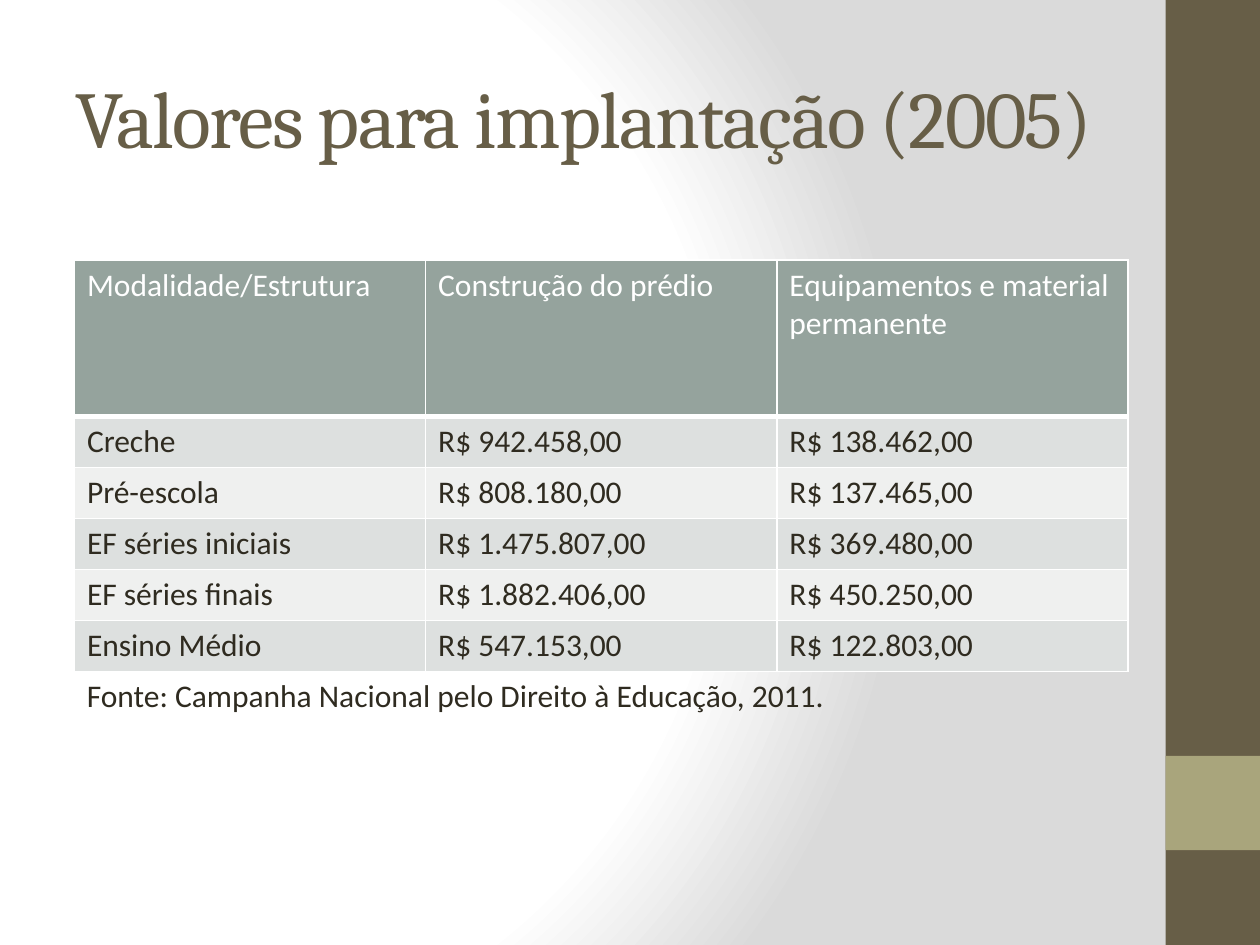
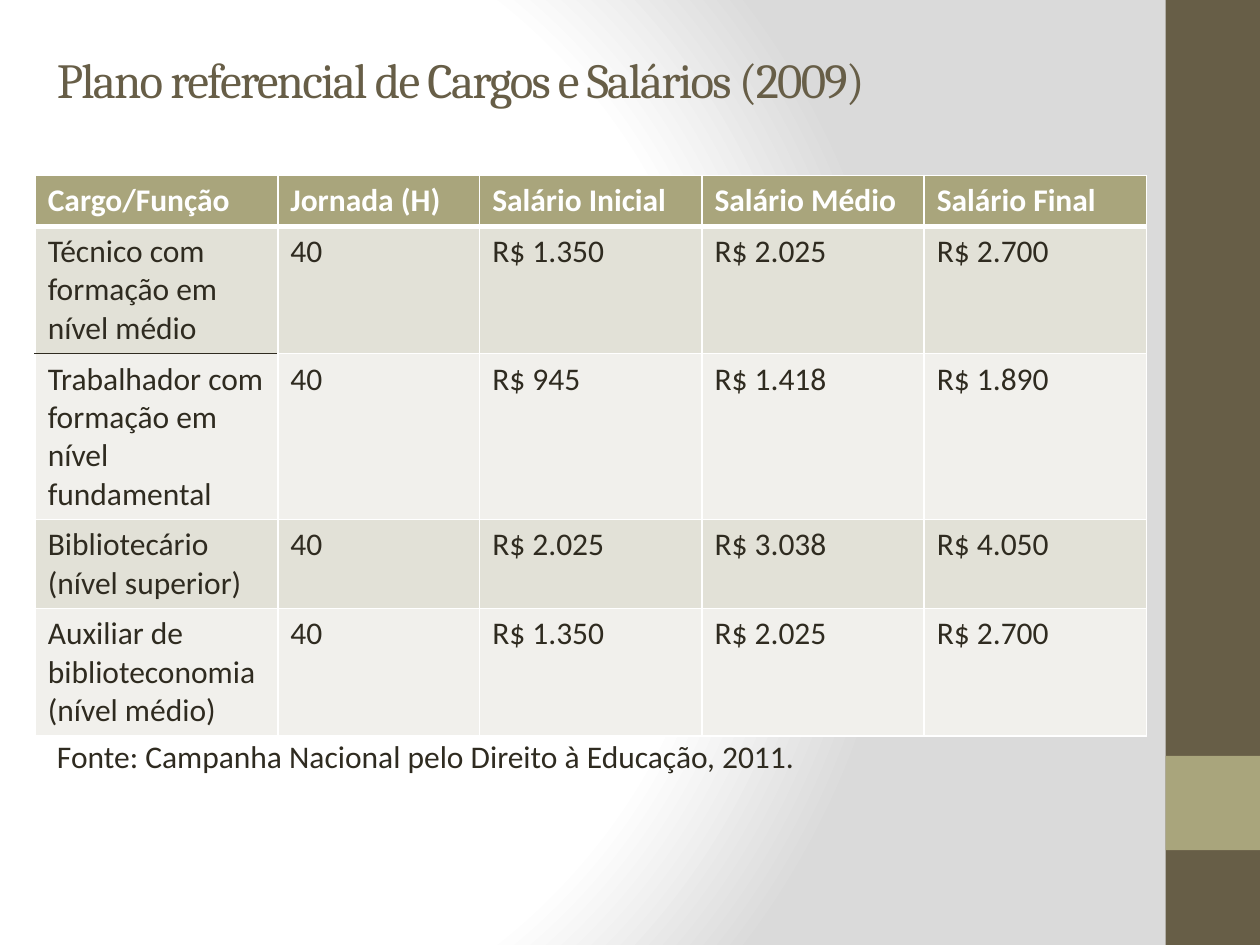
"""Build two table slides on school set-up costs and reference salaries."""
from dataclasses import dataclass

from lxml import etree
from pptx import Presentation
from pptx import util as u
from pptx.dml import color
from pptx.enum import shapes, text
from pptx.oxml import ns, parse_xml


@dataclass(frozen=True)
class Theme:
    brown: str = "675E47"
    olive: str = "A9A57C"
    sage: str = "95A39D"
    ink: str = "2F2B20"
    white: str = "FFFFFF"
    grey: str = "DADADA"
    heading_font: str = "Cambria"
    body_font: str = "Calibri"
    body_size: int = 18
    rule: int = 1
    header_rule: int = 3


@dataclass(frozen=True)
class Area:
    left: float
    top: float
    width: float
    height: float

    def lengths(self) -> tuple:
        """Return the four sides as slide lengths."""
        return tuple(u.Cm(side) for side in (self.left, self.top, self.width, self.height))


@dataclass(frozen=True)
class TextStyle:
    font: str
    size: int
    colour: str
    bold: bool = False


@dataclass(frozen=True)
class TableStyle:
    header_fill: str
    bands: tuple[str, str]
    bold_header: bool


@dataclass(frozen=True)
class TablePage:
    title: str
    title_area: Area
    title_size: int
    table_left: float
    table_top: float
    widths: tuple[float, ...]
    heights: tuple[float, ...]
    rows: tuple[tuple[str, ...], ...]
    style: TableStyle
    source_area: Area
    dark_rules: frozenset = frozenset()


THEME = Theme()
BODY = TextStyle(THEME.body_font, THEME.body_size, THEME.ink)
SOURCE = "Fonte: Campanha Nacional pelo Direito à Educação, 2011."
SIDE_BANDS = (
    (Area(23.5, 0, 1.9, 19.05), THEME.brown),
    (Area(23.5, 15.24, 1.9, 1.9), THEME.olive),
)

PAGES = (
    TablePage(
        title="Valores para implantação (2005)",
        title_area=Area(1.27, 0.76, 21.16, 3.18),
        title_size=46,
        table_left=1.5,
        table_top=5.24,
        widths=(7.08,) * 3,
        heights=(3.15,) + (1.03,) * 5,
        rows=(
            ("Modalidade/Estrutura", "Construção do prédio", "Equipamentos e material permanente"),
            ("Creche", "R$ 942.458,00", "R$ 138.462,00"),
            ("Pré-escola", "R$ 808.180,00", "R$ 137.465,00"),
            ("EF séries iniciais", "R$ 1.475.807,00", "R$ 369.480,00"),
            ("EF séries finais", "R$ 1.882.406,00", "R$ 450.250,00"),
            ("Ensino Médio", "R$ 547.153,00", "R$ 122.803,00"),
        ),
        style=TableStyle(THEME.sage, ("DDE0DF", "EFF0EF"), False),
        source_area=Area(1.5, 13.51, 19.6, 1.03),
    ),
    TablePage(
        title="Plano referencial de Cargos e Salários (2009)",
        title_area=Area(0.9, 0, 22.86, 3.18),
        title_size=28,
        table_left=0.71,
        table_top=3.54,
        widths=(4.89, 4.07) + (4.48,) * 3,
        heights=(1.02, 2.57, 3.34, 1.8, 2.57),
        rows=(
            ("Cargo/Função", "Jornada (H)", "Salário Inicial", "Salário Médio", "Salário Final"),
            ("Técnico com formação em nível médio", "40", "R$ 1.350", "R$ 2.025", "R$ 2.700"),
            ("Trabalhador com formação em nível fundamental", "40", "R$ 945", "R$ 1.418", "R$ 1.890"),
            ("Bibliotecário (nível superior)", "40", "R$ 2.025", "R$ 3.038", "R$ 4.050"),
            ("Auxiliar de biblioteconomia (nível médio)", "40", "R$ 1.350", "R$ 2.025", "R$ 2.700"),
        ),
        style=TableStyle(THEME.olive, ("E2E1D7", "F1F0EC"), True),
        source_area=Area(0.9, 14.73, 19.6, 1.03),
        dark_rules=frozenset({(1, 0)}),
    ),
)


def set_background(page) -> None:
    """Fill the page with the shared circular gradient."""
    stops = "".join(
        f'<a:gs pos="{share * 1000}"><a:srgbClr val="{tone}"/></a:gs>'
        for share, tone in ((0, THEME.white), (75, THEME.white), (100, THEME.grey))
    )
    page.element.cSld.insert(0, parse_xml(
        f'<p:bg {ns.nsdecls("p", "a")}><p:bgPr><a:gradFill rotWithShape="1">'
        f'<a:gsLst>{stops}</a:gsLst><a:path path="circle">'
        '<a:fillToRect l="20000" t="50000" r="100000" b="50000"/></a:path>'
        '</a:gradFill><a:effectLst/></p:bgPr></p:bg>'
    ))


def add_band(page, area: Area, fill: str) -> None:
    """Draw one plain band at the side of the page."""
    band = page.shapes.add_shape(shapes.MSO_SHAPE.RECTANGLE, *area.lengths())
    band.shadow.inherit = False
    band.fill.solid()
    band.fill.fore_color.rgb = color.RGBColor.from_string(fill)
    band.line.fill.background()


def write(frame, words: str, style: TextStyle):
    """Put styled words into a text frame and return the paragraph."""
    para = frame.paragraphs[0]
    para.text = words
    para.font.name = style.font
    para.font.size = u.Pt(style.size)
    para.font.bold = style.bold
    para.font.color.rgb = color.RGBColor.from_string(style.colour)
    return para


def add_text(page, area: Area, words: str, style: TextStyle, anchor=text.MSO_ANCHOR.TOP):
    """Add a wrapping text box and return its paragraph."""
    frame = page.shapes.add_textbox(*area.lengths()).text_frame
    frame.word_wrap = True
    frame.vertical_anchor = anchor
    return write(frame, words, style)


def add_title(page, content: TablePage) -> None:
    """Add the page title with tightened letter spacing."""
    style = TextStyle(THEME.heading_font, content.title_size, THEME.brown)
    para = add_text(page, content.title_area, content.title, style, text.MSO_ANCHOR.MIDDLE)
    for span in para.runs:
        span.font._element.set("spc", "-100")


def set_border(cell, side: str, points: int, tone: str) -> None:
    """Append one solid cell border."""
    line = etree.SubElement(
        cell._tc.get_or_add_tcPr(), ns.qn(f"a:ln{side}"), w=str(u.Pt(points))
    )
    fill = etree.SubElement(line, ns.qn("a:solidFill"))
    etree.SubElement(fill, ns.qn("a:srgbClr"), val=tone)


def add_table(page, content: TablePage) -> None:
    """Add the banded table with its white grid."""
    area = Area(content.table_left, content.table_top, sum(content.widths), sum(content.heights))
    table = page.shapes.add_table(
        len(content.rows), len(content.widths), *area.lengths()
    ).table
    table.first_row = table.horz_banding = False
    for column, width in zip(table.columns, content.widths):
        column.width = u.Cm(width)
    for row, height in zip(table.rows, content.heights):
        row.height = u.Cm(height)

    def rule_below(row: int, column: int) -> tuple[int, str]:
        tone = THEME.ink if (row, column) in content.dark_rules else THEME.white
        return (THEME.header_rule if row == 0 else THEME.rule), tone

    header = TextStyle(
        THEME.body_font, THEME.body_size, THEME.white, content.style.bold_header
    )
    for row, values in enumerate(content.rows):
        fill = content.style.bands[(row - 1) % 2] if row else content.style.header_fill
        for column, words in enumerate(values):
            cell = table.cell(row, column)
            write(cell.text_frame, words, BODY if row else header)
            for side in "LR":
                set_border(cell, side, THEME.rule, THEME.white)
            above = rule_below(row - 1, column) if row else (THEME.rule, THEME.white)
            set_border(cell, "T", *above)
            set_border(cell, "B", *rule_below(row, column))
            cell.fill.solid()
            cell.fill.fore_color.rgb = color.RGBColor.from_string(fill)


def build_page(deck, content: TablePage) -> None:
    """Add one complete table page to the deck."""
    page = deck.slides.add_slide(deck.slide_layouts[6])
    set_background(page)
    for area, fill in SIDE_BANDS:
        add_band(page, area, fill)
    add_title(page, content)
    add_table(page, content)
    add_text(page, content.source_area, SOURCE, BODY)


def main() -> None:
    """Build and save the deck."""
    deck = Presentation()
    deck.slide_width, deck.slide_height = u.Cm(25.4), u.Cm(19.05)
    for content in PAGES:
        build_page(deck, content)
    deck.save("out.pptx")


if __name__ == "__main__":
    main()
